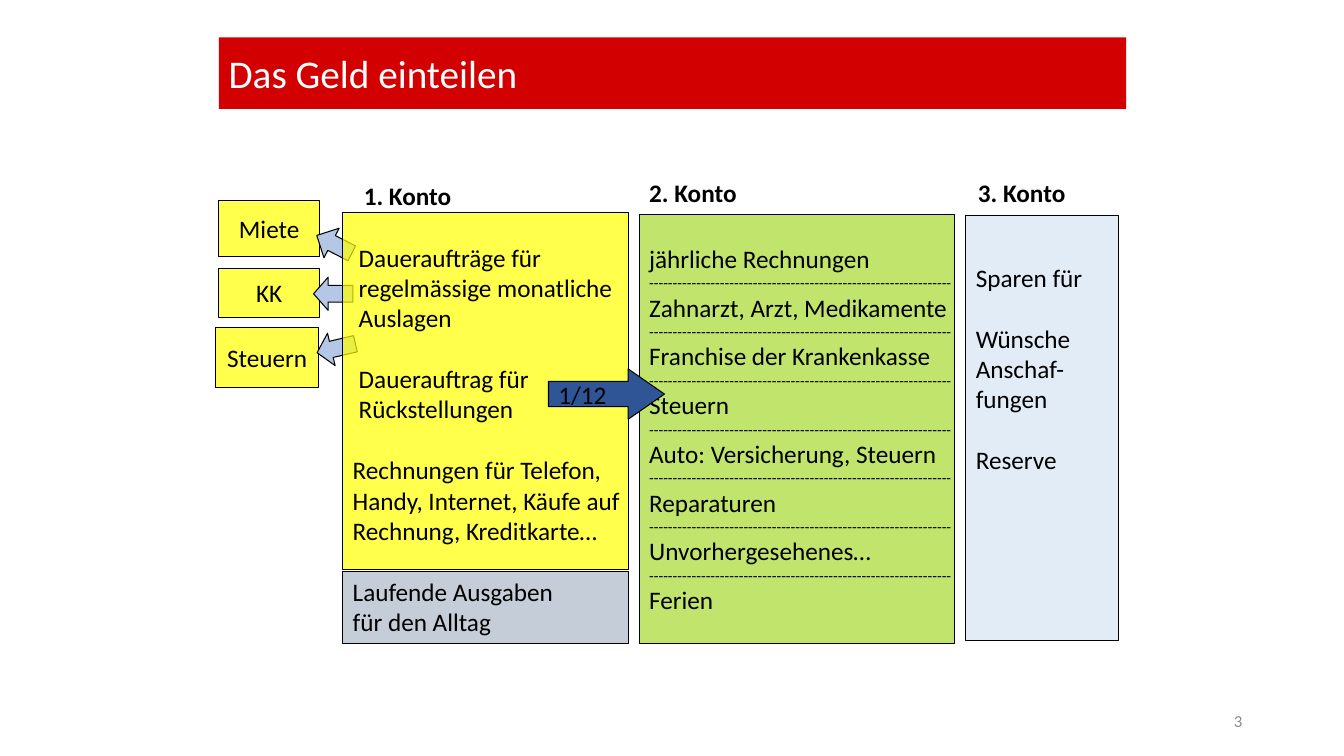
from lxml import etree
from pptx import Presentation
from pptx.dml.color import RGBColor
from pptx.enum import shapes, text
from pptx.oxml.ns import qn
from pptx.util import Inches, Pt

COLORS = {
    "red": "D20000", "white": "FFFFFF", "black": "000000", "gray": "8C8C8C",
    "yellow": "FFFF00", "slate": "ADB9CA", "green": "A7D930",
    "sky": "9DC3E6", "pale": "B4C7E7", "navy": "2F5597",
}
KIND = shapes.MSO_SHAPE
MID = text.MSO_ANCHOR.MIDDLE
TOP = text.MSO_ANCHOR.TOP
ALIGN = text.PP_ALIGN
GAP = 22  # one empty line of 18 pt text


class Deck:
    font = "Calibri"
    size = 18

    def __init__(self):
        self.prs = Presentation()
        self.prs.slide_width = Inches(13.33)
        self.prs.slide_height = Inches(7.5)
        self.slide = self.prs.slides.add_slide(self.prs.slide_layouts[6])

    def color(self, name):
        return RGBColor.from_string(COLORS[name])

    def shape(self, kind, at, fill, alpha=100, line=True, turn=0, adj=()):
        item = self.slide.shapes.add_shape(kind, *map(Inches, at))
        item.shadow.inherit = False
        item.rotation = turn
        for i, value in enumerate(adj):
            item.adjustments[i] = value
        item.fill.solid()
        item.fill.fore_color.rgb = self.color(fill)
        if alpha < 100:
            tint = item.fill._xPr.find(qn("a:solidFill"))[0]
            etree.SubElement(tint, qn("a:alpha"), val=str(alpha * 1000))
        if line:
            item.line.color.rgb = self.color("black")
            item.line.width = Pt(0.75)
        else:
            item.line.fill.background()
        return item

    def words(self, item, lines, anchor=MID, wrap=False, align=ALIGN.LEFT,
              color="black", bold=False, top=0.05):
        """Fill a shape; each line is (words, size, space before, indent)."""
        frame = item.text_frame
        frame.word_wrap = wrap
        frame.vertical_anchor = anchor
        frame.margin_top = Inches(top)
        for i, (words, size, gap, left) in enumerate(lines):
            para = frame.add_paragraph() if i else frame.paragraphs[0]
            para.alignment = align
            if gap:
                para.space_before = Pt(gap)
            if left:
                para._p.get_or_add_pPr().set("marL", str(Inches(left)))
            run = para.add_run()
            run.text = words
            run.font.name = self.font
            run.font.size = Pt(size)
            run.font.bold = bold
            run.font.color.rgb = self.color(color)

    def line(self, words, gap=0, left=0, size=None):
        return words, size or self.size, gap, left

    def label(self, at, words, size=None, **style):
        box = self.slide.shapes.add_textbox(*map(Inches, at))
        self.words(box, [self.line(words, size=size)], **style)


def main():
    deck = Deck()
    line = deck.line

    title = deck.shape(KIND.RECTANGLE, (2.17, 0.37, 9, 0.71), "red", line=False)
    deck.words(title, [line("Das Geld einteilen", size=28)],
               wrap=True, color="white")

    for words, at in (("Miete", (2.17, 1.99, 1, 0.56)),
                      ("KK", (2.17, 2.66, 1, 0.49)),
                      ("Steuern", (2.14, 3.25, 1.02, 0.59))):
        bill = deck.shape(KIND.RECTANGLE, at, "yellow", 70)
        deck.words(bill, [line(words)], align=ALIGN.CENTER)

    for x, y, turn, head in ((3.12, 2.26, 27.2, 0.5),
                             (3.11, 2.75, 0, 0.44),
                             (3.14, 3.29, 346.8, 0.44)):
        deck.shape(KIND.LEFT_ARROW, (x, y, 0.39, 0.33), "pale",
                   turn=turn, adj=(0.5, head))

    first = deck.shape(KIND.RECTANGLE, (3.4, 2.11, 2.83, 3.54), "yellow", 70)
    deck.words(first, [
        line("Daueraufträge für", left=0.06),
        line("regelmässige monatliche", left=0.06),
        line("Auslagen", left=0.06),
        line("Dauerauftrag für", GAP, 0.06),
        line("Rückstellungen", left=0.06),
        line("Rechnungen für Telefon,", GAP),
        line("Handy, Internet, Käufe auf"),
        line("Rechnung, Kreditkarte…"),
    ], anchor=TOP, top=0.29)

    daily = deck.shape(KIND.RECTANGLE, (3.4, 5.67, 2.83, 0.71), "slate", 70)
    deck.words(daily, [line("Laufende Ausgaben"), line("für den Alltag")],
               anchor=TOP, wrap=True)

    yearly = ("jährliche Rechnungen", "Zahnarzt, Arzt, Medikamente",
              "Franchise der Krankenkasse", "Steuern",
              "Auto: Versicherung, Steuern", "Reparaturen",
              "Unvorhergesehenes…", "Ferien")
    rows = [line(yearly[0])]
    for words in yearly[1:]:
        rows += [line("-" * 64, size=11), line(words)]
    second = deck.shape(KIND.RECTANGLE, (6.34, 2.13, 3.13, 4.25), "green", 70)
    deck.words(second, rows)

    third = deck.shape(KIND.RECTANGLE, (9.58, 2.14, 1.51, 4.21), "sky", 30)
    deck.words(third, [
        line("Sparen für"), line("Wünsche", GAP), line("Anschaf-"),
        line("fungen"), line("Reserve", GAP),
    ], anchor=TOP, wrap=True, top=0.46)

    for i, (x, y) in enumerate(((3.51, 1.74), (6.34, 1.71), (9.6, 1.71)), 1):
        deck.label((x, y, 1.28, 0.4), f"{i}. Konto",
                   anchor=TOP, wrap=True, bold=True)

    share = deck.shape(KIND.RIGHT_ARROW, (5.44, 3.66, 1.15, 0.5), "navy",
                       adj=(0.5, 0.72))
    deck.words(share, [line("1/12")])

    deck.label((9.42, 6.95, 3, 0.4), "3", size=12, wrap=True,
               align=ALIGN.RIGHT, color="gray")
    deck.prs.save("out.pptx")


if __name__ == "__main__":
    main()
